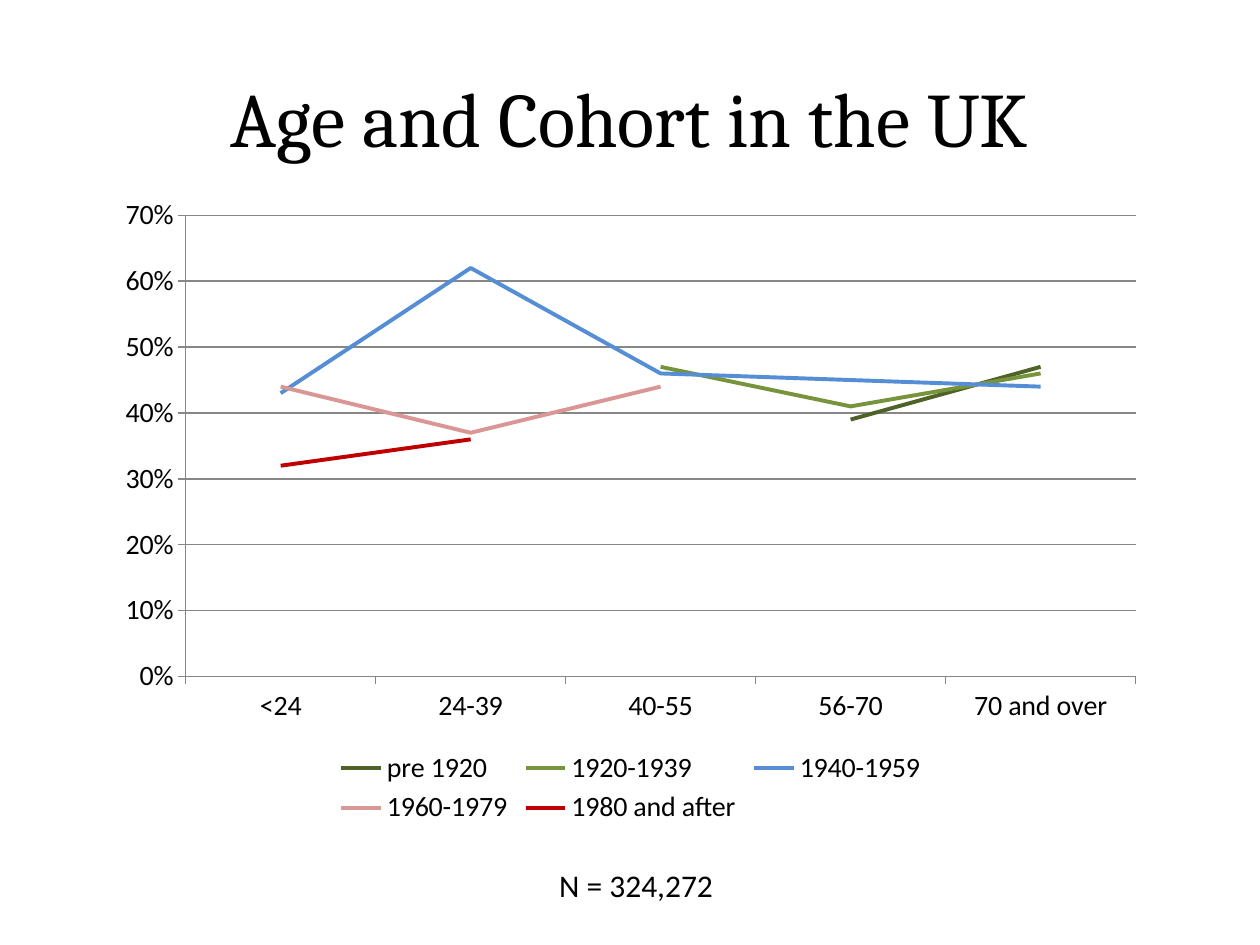
from pptx import Presentation
from pptx.chart.data import CategoryChartData
from pptx.dml.color import RGBColor
from pptx.enum.chart import XL_CHART_TYPE, XL_LEGEND_POSITION, XL_TICK_MARK
from pptx.enum.text import MSO_ANCHOR, PP_ALIGN
from pptx.util import Inches, Pt

LINE = XL_CHART_TYPE.LINE
BOTTOM = XL_LEGEND_POSITION.BOTTOM
OUTSIDE = XL_TICK_MARK.OUTSIDE
MIDDLE = MSO_ANCHOR.MIDDLE
LEFT, CENTER = PP_ALIGN.LEFT, PP_ALIGN.CENTER

COLORS = {
    "text": "000000",
    "axis": "878787",
    "pre 1920": "4F6228",
    "1920-1939": "77933C",
    "1940-1959": "558ED5",
    "1960-1979": "D99694",
    "1980 and after": "C00000",
}
AGES = ["<24", "24-39", "40-55", "56-70", "70 and over"]
COHORTS = {
    "pre 1920": [None, None, None, 0.39, 0.47],
    "1920-1939": [None, None, 0.47, 0.41, 0.46],
    "1940-1959": [0.43, 0.62, 0.46, 0.45, 0.44],
    "1960-1979": [0.44, 0.37, 0.44, None, None],
    "1980 and after": [0.32, 0.36, None, None, None],
}
TITLE_FONT = {"name": "Cambria", "size": Pt(44)}
NOTE_FONT = {"name": "Calibri", "size": Pt(18)}
CHART_FONT = {"name": "Calibri", "size": Pt(16)}


def rgb(name):
    return RGBColor.from_string(COLORS[name])


def set_font(font, values):
    for key, value in values.items():
        setattr(font, key, value)
    font.color.rgb = rgb("text")


def style_line(line, color, width):
    line.color.rgb = rgb(color)
    line.width = Pt(width)


def add_text(s, box, text, font, align, wrap):
    tf = s.shapes.add_textbox(*map(Inches, box)).text_frame
    tf.word_wrap = wrap
    tf.vertical_anchor = MIDDLE
    p = tf.paragraphs[0]
    p.alignment = align
    r = p.add_run()
    r.text = text
    set_font(r.font, font)


def add_cohort_chart(s, box):
    data = CategoryChartData(number_format="0%")
    data.categories = AGES
    for name, values in COHORTS.items():
        data.add_series(name, values)
    chart = s.shapes.add_chart(LINE, *map(Inches, box), data).chart
    chart.has_title = False
    set_font(chart.font, CHART_FONT)

    # Legend
    chart.has_legend = True
    chart.legend.position = BOTTOM
    chart.legend.include_in_layout = False

    # Axes and gridlines
    for axis in (chart.category_axis, chart.value_axis):
        axis.major_tick_mark = OUTSIDE
        style_line(axis.format.line, "axis", 0.75)
    axis = chart.value_axis
    axis.minimum_scale, axis.maximum_scale, axis.major_unit = 0, 0.7, 0.1
    axis.tick_labels.number_format = "0%"
    axis.tick_labels.number_format_is_linked = False
    axis.has_major_gridlines = True
    style_line(axis.major_gridlines.format.line, "axis", 0.75)

    # One line for each cohort
    plot = chart.plots[0]
    plot.vary_by_categories = False
    for series in plot.series:
        series.smooth = False
        style_line(series.format.line, series.name, 2.25)


def main():
    prs = Presentation()
    prs.slide_width, prs.slide_height = Inches(10), Inches(7.5)
    s = prs.slides.add_slide(prs.slide_layouts[6])
    add_text(s, (0.5, 0.3, 9, 1.25), "Age and Cohort in the UK", TITLE_FONT, CENTER, True)
    add_text(s, (4.34, 6.82, 1.44, 0.4), "N = 324,272", NOTE_FONT, LEFT, False)
    add_cohort_chart(s, (0.83, 1.47, 8.35, 5.12))
    prs.save("out.pptx")


if __name__ == "__main__":
    main()
